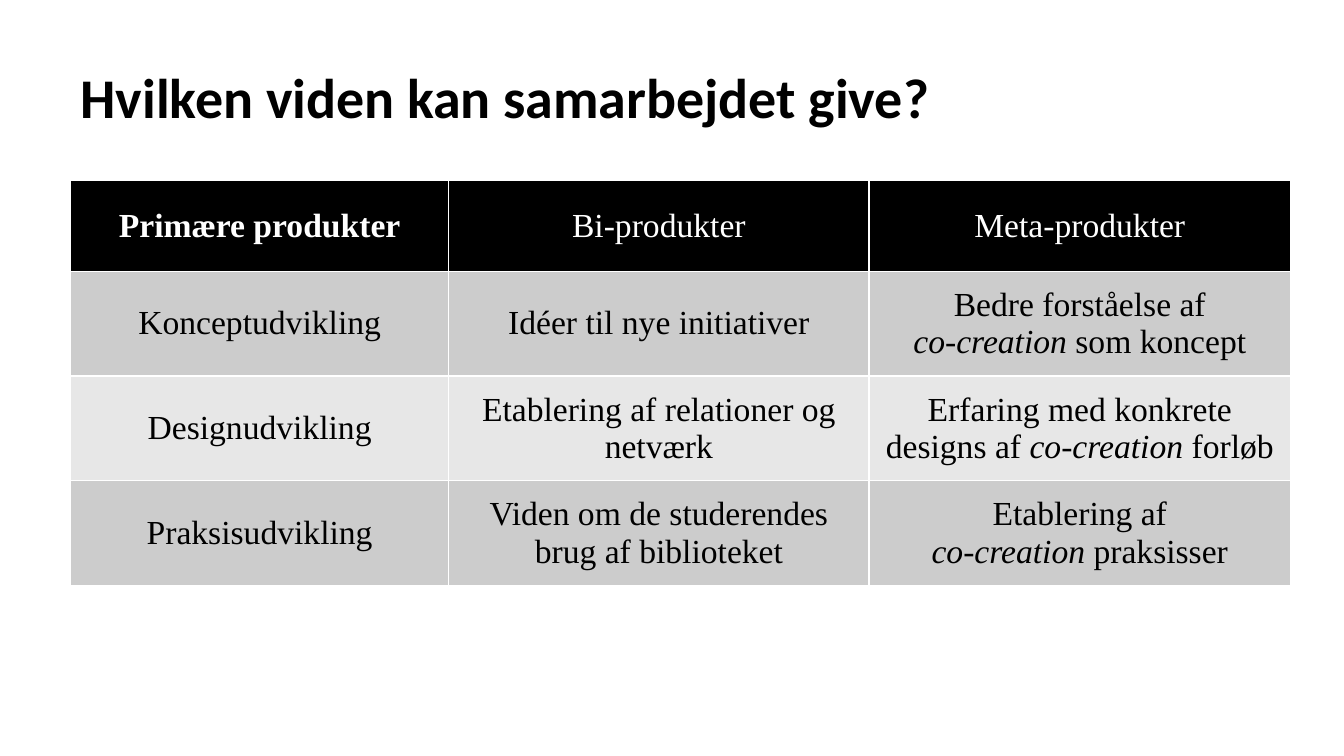
"""Build a slide with a title and a table of the products of collaboration."""
import pptx
import pptx.util
import pptx.dml.color
import pptx.enum.text

Inches = pptx.util.Inches
TERM = "co-creation"
COLS = [3.75, 4.17, 4.18]
ROWS = [0.9, 1.04, 1.04, 1.04]
FILLS = ["000000", "CCCCCC", "E7E7E7", "CCCCCC"]
CELLS = [
    ["Primære produkter", "Bi-produkter", "Meta-produkter"],
    ["Konceptudvikling", "Idéer til nye initiativer",
     "Bedre forståelse af\nco-creation som koncept"],
    ["Designudvikling", "Etablering af relationer og netværk",
     "Erfaring med konkrete\ndesigns af co-creation forløb"],
    ["Praksisudvikling", "Viden om de studerendes brug af biblioteket",
     "Etablering af\nco-creation praksisser"],
]


def color(code):
    return pptx.dml.color.RGBColor.from_string(code)


def style(run, face, size, code, bold):
    run.font.name = face
    run.font.size = pptx.util.Pt(size)
    run.font.color.rgb = color(code)
    run.font.bold = bold


def add_title(slide, text):
    title = slide.shapes.title
    title.left, title.top = Inches(0.7), Inches(0.57)
    title.width, title.height = Inches(11.93), Inches(0.77)
    frame = title.text_frame
    frame.text = text
    frame.word_wrap = True
    frame.auto_size = pptx.enum.text.MSO_AUTO_SIZE.SHAPE_TO_FIT_TEXT
    frame.vertical_anchor = pptx.enum.text.MSO_ANCHOR.TOP
    line = frame.paragraphs[0]
    line.alignment = pptx.enum.text.PP_ALIGN.LEFT
    style(line.runs[0], "Calibri", 40, "000000", True)


def fill_line(line, code, bold):
    before, term, after = line.text.partition(TERM)
    line.text = ""
    line.alignment = pptx.enum.text.PP_ALIGN.CENTER
    for part in filter(None, (before, term, after)):
        run = line.add_run()
        run.text = part
        style(run, "Times New Roman", 24, code, bold)
        run.font.italic = part == TERM


def fill_cell(cell, text, fill, code, bold):
    cell.fill.solid()
    cell.fill.fore_color.rgb = color(fill)
    cell.vertical_anchor = pptx.enum.text.MSO_ANCHOR.MIDDLE
    cell.margin_left = cell.margin_right = Inches(0.13)
    cell.margin_top = cell.margin_bottom = Inches(0.07)
    cell.text_frame.text = text
    for line in cell.text_frame.paragraphs:
        fill_line(line, code, bold)


def add_grid(slide):
    table = slide.shapes.add_table(
        len(ROWS), len(COLS), Inches(0.7), Inches(1.79),
        Inches(sum(COLS)), Inches(sum(ROWS))).table
    for col, width in zip(table.columns, COLS):
        col.width = Inches(width)
    for r, height in enumerate(ROWS):
        table.rows[r].height = Inches(height)
        code = "000000" if r else "FFFFFF"
        for c, text in enumerate(CELLS[r]):
            fill_cell(table.cell(r, c), text, FILLS[r], code, r == c == 0)


def main():
    deck = pptx.Presentation()
    deck.slide_width, deck.slide_height = Inches(13.33), Inches(7.5)
    slide = deck.slides.add_slide(deck.slide_layouts[5])
    add_title(slide, "Hvilken viden kan samarbejdet give?")
    add_grid(slide)
    deck.save("out.pptx")


if __name__ == "__main__":
    main()
